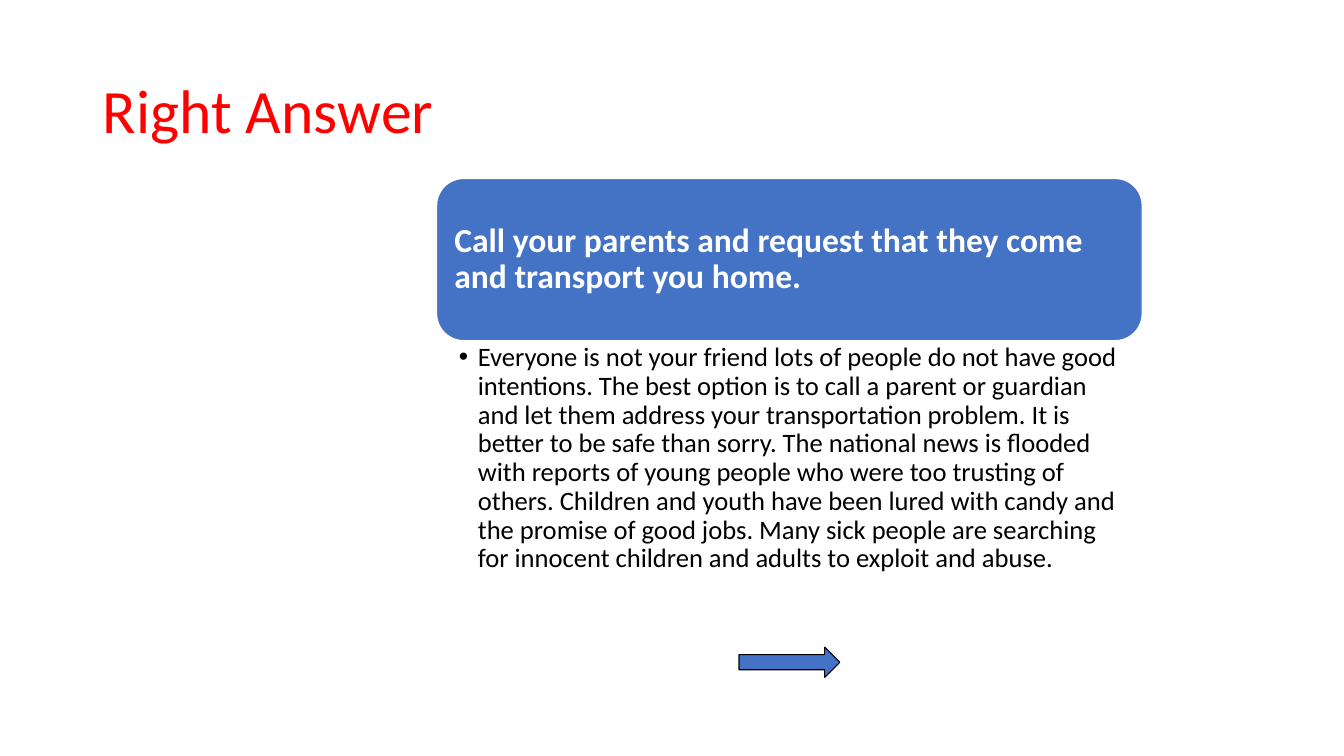
from pptx import Presentation
from pptx.dml.color import RGBColor
from pptx.enum.shapes import MSO_SHAPE
from pptx.enum.text import MSO_ANCHOR, MSO_AUTO_SIZE, PP_ALIGN
from pptx.util import Inches, Pt

ROUNDED = MSO_SHAPE.ROUNDED_RECTANGLE
ARROW = MSO_SHAPE.RIGHT_ARROW
MIDDLE, TOP = MSO_ANCHOR.MIDDLE, MSO_ANCHOR.TOP
LEFT = PP_ALIGN.LEFT
NO_FIT = MSO_AUTO_SIZE.NONE

ANSWER = "Call your parents and request that they come and transport you home."
REASON = (
    "Everyone is not your friend lots of people do not have good intentions. "
    "The best option is to call a parent or guardian and let them address your "
    "transportation problem. It is better to be safe than sorry. The national news "
    "is flooded with reports of young people who were too trusting of others. "
    "Children and youth have been lured with candy and the promise of good jobs. "
    "Many sick people are searching for innocent children and adults to exploit and abuse."
)


def color(value):
    """Turn a hex string into a colour."""
    return RGBColor.from_string(value)


def apply(target, values):
    """Set each named attribute on the target."""
    for name, value in values.items():
        setattr(target, name, value)


class SlideBuilder:
    """Hold the style and the current slide."""

    font = "Calibri"
    blue, red, white, black = "4472C4", "FF0000", "FFFFFF", "000000"

    def __init__(self, slide):
        """Keep the slide to build on."""
        self.slide = slide

    def place(self, box, left, top, width, height):
        """Position a box in inches."""
        apply(box, {"left": Inches(left), "top": Inches(top),
                    "width": Inches(width), "height": Inches(height)})

    def fill_text(self, box, text, size, ink, anchor=MIDDLE, bold=False,
                  insets=(0.1, 0.05, 0.1, 0.05)):
        """Fill a box with one formatted paragraph and return it."""
        frame = box.text_frame
        left, top, right, bottom = map(Inches, insets)
        apply(frame, {"word_wrap": True, "auto_size": NO_FIT, "vertical_anchor": anchor,
                      "margin_left": left, "margin_top": top,
                      "margin_right": right, "margin_bottom": bottom})
        para = frame.paragraphs[0]
        apply(para, {"alignment": LEFT, "line_spacing": 0.9,
                     "space_before": Pt(0), "space_after": Pt(0)})
        span = para.add_run()
        span.text = text
        apply(span.font, {"name": self.font, "size": Pt(size), "bold": bold})
        span.font.color.rgb = color(ink)
        return para

    def title(self, text, area):
        """Fill the title placeholder."""
        box = self.slide.shapes.title
        self.place(box, *area)
        self.fill_text(box, text, 44, self.red)

    def bullet(self, text, area):
        """Fill the body placeholder with one bullet."""
        box = self.slide.placeholders[1]
        self.place(box, *area)
        para = self.fill_text(box, text, 19, self.black, TOP,
                              insets=(0.22, 0.03, 0.19, 0.03))
        indent = Inches(0.19)
        properties = para._p.get_or_add_pPr()
        properties.set("marL", str(indent))
        properties.set("indent", str(-indent))

    def shape(self, kind, area, line, weight):
        """Add a blue preset shape with an outline."""
        box = self.slide.shapes.add_shape(kind, *map(Inches, area))
        box.shadow.inherit = False
        box.fill.solid()
        box.fill.fore_color.rgb = color(self.blue)
        box.line.color.rgb = color(line)
        box.line.width = Pt(weight)
        return box

    def card(self, text, area):
        """Add a rounded card with bold white text."""
        box = self.shape(ROUNDED, area, self.white, 1)
        self.fill_text(box, text, 24, self.white, bold=True, insets=(0.1,) * 4)

    def arrow(self, area):
        """Add a right arrow."""
        self.shape(ARROW, area, self.black, 0.75)


def main():
    """Build and save the deck."""
    deck = Presentation()
    apply(deck, {"slide_width": Inches(13.33), "slide_height": Inches(7.5)})
    page = SlideBuilder(deck.slides.add_slide(deck.slide_layouts[1]))
    left, top, width, height = 4.33, 1.77, 7, 1.61
    page.title("Right Answer", (0.92, 0.4, 11.5, 1.45))
    page.arrow((7.33, 6.42, 1, 0.3))
    page.card(ANSWER, (left, top, width, height))
    page.bullet(REASON, (left, top + height, width, 3.02))
    deck.save("out.pptx")


if __name__ == "__main__":
    main()
